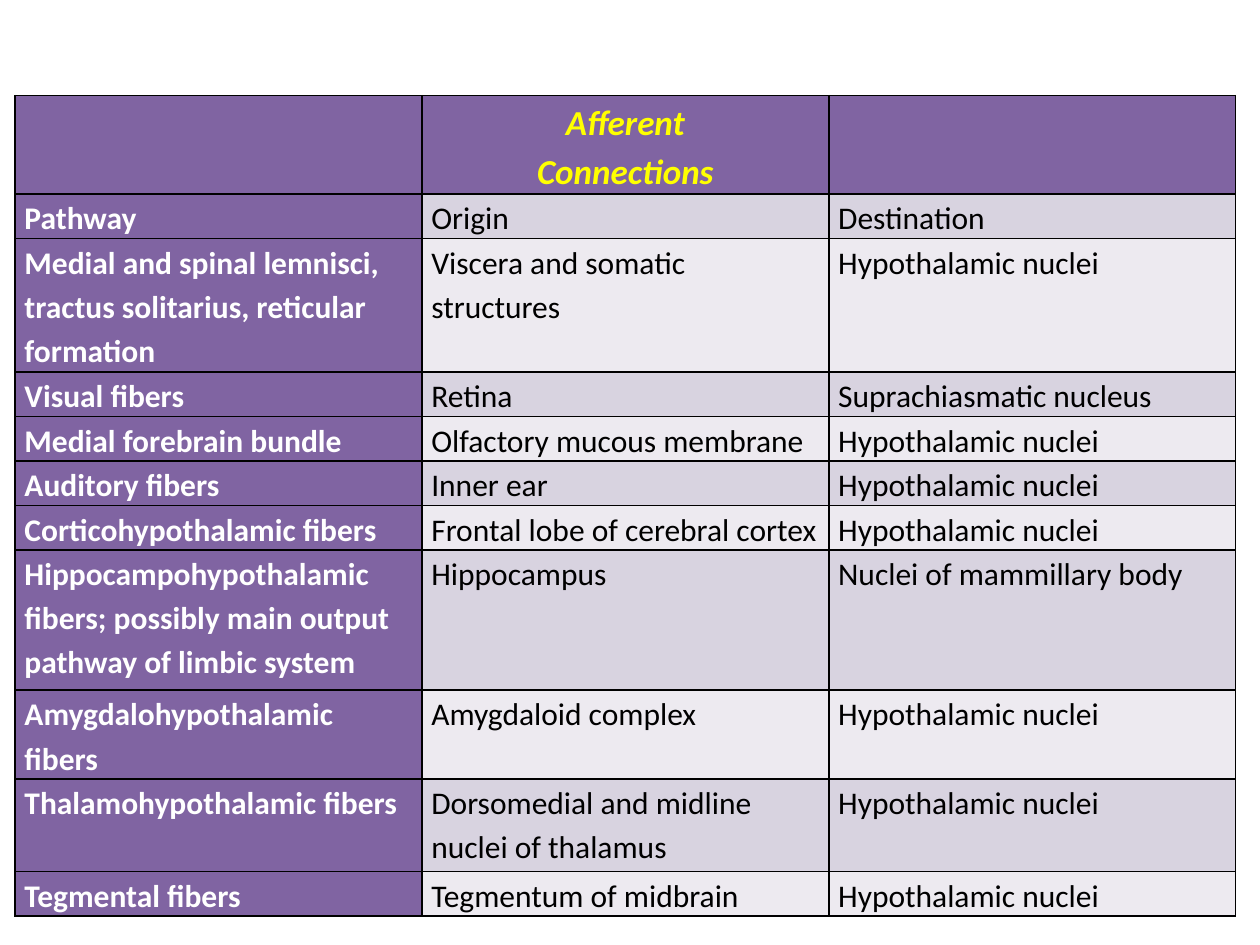
from lxml import etree
from pptx import Presentation
from pptx.dml.color import RGBColor
from pptx.enum.text import PP_ALIGN
from pptx.oxml.ns import qn
from pptx.util import Pt

LEFT, CENTER = PP_ALIGN.LEFT, PP_ALIGN.CENTER
PURPLE, WHITE, BLACK, YELLOW = "8064A2", "FFFFFF", "000000", "FFFF00"
BANDS = ["D8D3E0", "EDEAF0"]
COLUMN_WIDTH = 232.5
LINE_HEIGHT = 25.4

# Height in points, then pathway, origin and destination
ROWS = [
    (56.4, "", "Afferent\nConnections", ""),
    (LINE_HEIGHT, "Pathway", "Origin", "Destination"),
    (3 * LINE_HEIGHT, "Medial and spinal lemnisci, tractus solitarius, reticular formation",
     "Viscera and somatic structures", "Hypothalamic nuclei"),
    (LINE_HEIGHT, "Visual fibers", "Retina", "Suprachiasmatic nucleus"),
    (LINE_HEIGHT, "Medial forebrain bundle", "Olfactory mucous membrane", "Hypothalamic nuclei"),
    (LINE_HEIGHT, "Auditory fibers", "Inner ear", "Hypothalamic nuclei"),
    (LINE_HEIGHT, "Corticohypothalamic fibers", "Frontal lobe of cerebral cortex",
     "Hypothalamic nuclei"),
    (80.2, "Hippocampohypothalamic fibers; possibly main output pathway of limbic system",
     "Hippocampus", "Nuclei of mammillary body"),
    (2 * LINE_HEIGHT, "Amygdalohypothalamic fibers", "Amygdaloid complex", "Hypothalamic nuclei"),
    (53, "Thalamohypothalamic fibers", "Dorsomedial and midline nuclei of thalamus",
     "Hypothalamic nuclei"),
    (LINE_HEIGHT, "Tegmental fibers", "Tegmentum of midbrain", "Hypothalamic nuclei"),
]


def write_text(cell, text, size=18, color=BLACK, bold=False, italic=False, align=LEFT):
    cell.text_frame.text = text
    for paragraph in cell.text_frame.paragraphs:
        paragraph.alignment = align
        paragraph.line_spacing = 1.15
        font = paragraph.font
        for run in paragraph.runs:
            font = run.font
        font.name = "Calibri"
        font.size = Pt(size)
        font.bold = bold
        font.italic = italic
        font.color.rgb = RGBColor.from_string(color)


def format_cell(cell, fill):
    """Set the insets, the black 1 pt borders and the fill."""
    cell.margin_left = cell.margin_right = Pt(5.4)
    cell.margin_top = cell.margin_bottom = Pt(0)
    properties = cell._tc.get_or_add_tcPr()
    for side in ("a:lnL", "a:lnR", "a:lnT", "a:lnB"):
        line = etree.SubElement(properties, qn(side), w=str(Pt(1)))
        solid = etree.SubElement(line, qn("a:solidFill"))
        etree.SubElement(solid, qn("a:srgbClr"), val=BLACK)
    cell.fill.solid()
    cell.fill.fore_color.rgb = RGBColor.from_string(fill)


presentation = Presentation()
presentation.slide_width = Pt(720)
presentation.slide_height = Pt(540)
slide = presentation.slides.add_slide(presentation.slide_layouts[6])

total_height = sum(height for height, *_ in ROWS)
table = slide.shapes.add_table(
    len(ROWS), 3, Pt(8.6), Pt(54.6), Pt(3 * COLUMN_WIDTH), Pt(total_height)
).table
for column in table.columns:
    column.width = Pt(COLUMN_WIDTH)

for row_index, (height, *texts) in enumerate(ROWS):
    table.rows[row_index].height = Pt(height)
    for column_index, text in enumerate(texts):
        cell = table.cell(row_index, column_index)
        is_header = row_index == 0
        is_pathway = column_index == 0
        format_cell(cell, PURPLE if is_header or is_pathway else BANDS[(row_index - 1) % 2])
        if is_header:
            write_text(cell, text, size=20, color=YELLOW, bold=True, italic=True, align=CENTER)
        elif is_pathway:
            write_text(cell, text, color=WHITE, bold=True)
        else:
            write_text(cell, text)

presentation.save("out.pptx")
